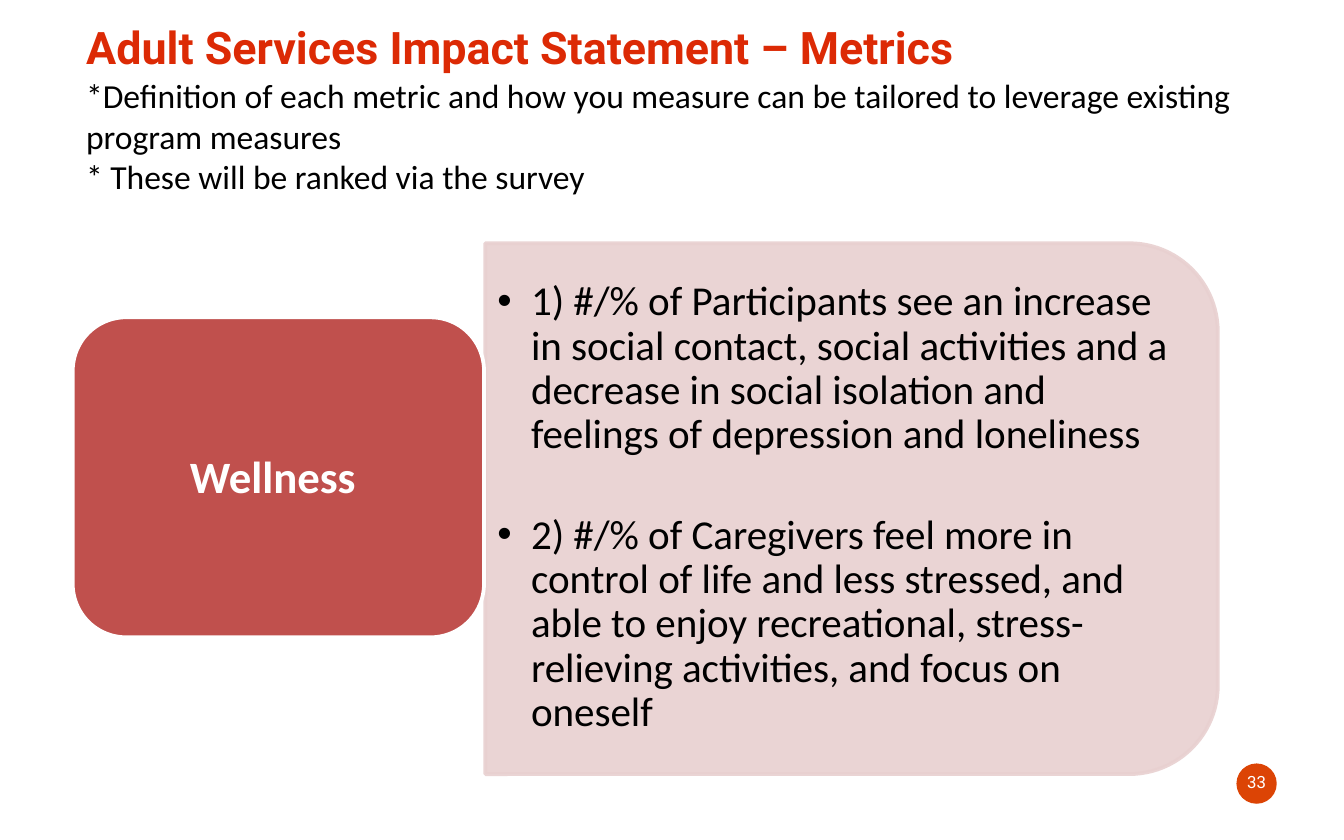
from pptx import Presentation
from pptx.dml.color import RGBColor
from pptx.enum.shapes import MSO_SHAPE as Shape
from pptx.enum.text import MSO_ANCHOR as Anchor, MSO_AUTO_SIZE as AutoSize, PP_ALIGN as Align
from pptx.oxml.ns import qn
from pptx.util import Pt
from lxml.etree import SubElement

RED, CARD, PANEL, BADGE = "DC2A05", "C0504D", "E8D0D0", "DC4405"
BLACK, WHITE = "000000", "FFFFFF"


def color(hex_string):
    return RGBColor.from_string(hex_string)


class SlideBuilder:
    heading_font = "Roboto"
    body_font = "Calibri"

    def __init__(self, slide):
        self.slide = slide

    def set_text(self, shape, lines, size, font, ink, bold=False, align=Align.LEFT,
                 anchor=Anchor.TOP, margins=(7.2, 3.6, 7.2, 3.6), spacing=1.0, gap=0):
        frame = shape.text_frame
        frame.text = "\n".join(lines)
        frame.word_wrap = True
        frame.auto_size = AutoSize.NONE
        frame.vertical_anchor = anchor
        (frame.margin_left, frame.margin_top,
         frame.margin_right, frame.margin_bottom) = map(Pt, margins)
        for index, paragraph in enumerate(frame.paragraphs):
            paragraph.alignment = align
            paragraph.line_spacing = spacing
            paragraph.space_before = Pt(gap if index else 0)
            paragraph.space_after = Pt(0)
            paragraph.font.name = font
            paragraph.font.size = Pt(size)
            paragraph.font.bold = bold
            paragraph.font.color.rgb = color(ink)

    def place(self, shape, box):
        shape.left, shape.top, shape.width, shape.height = map(Pt, box)
        return shape

    def title(self, text, box):
        shape = self.place(self.slide.shapes.title, box)
        self.set_text(shape, [text], 24, self.heading_font, RED, bold=True)

    def notes(self, lines, box):
        shape = self.slide.shapes.add_textbox(*map(Pt, box))
        self.set_text(shape, lines, 18, self.body_font, BLACK)

    def bullets(self, lines, box, indent=18):
        shape = self.place(self.slide.placeholders[1], box)
        self.set_text(shape, lines, 22, self.body_font, BLACK, anchor=Anchor.MIDDLE,
                      margins=(6.5, 3.6, 6.5, 3.6), spacing=0.9, gap=30)
        for paragraph in shape.text_frame.paragraphs:
            properties = paragraph._p.get_or_add_pPr()
            properties.set("marL", str(Pt(indent)))
            properties.set("indent", str(-Pt(indent)))

    def block(self, kind, box, fill, line=None):
        shape = self.slide.shapes.add_shape(kind, *map(Pt, box))
        shape.shadow.inherit = False
        shape.fill.solid()
        shape.fill.fore_color.rgb = color(fill)
        if line:
            shape.line.color.rgb = color(line)
            shape.line.width = Pt(2)
        else:
            shape.line.fill.background()
        return shape

    def panel(self, box):
        # The rounded top edge is turned to face right
        left, top, width, height = box
        shift = (width - height) / 2
        turned = (left + shift, top - shift, height, width)
        shape = self.block(Shape.ROUND_2_SAME_RECTANGLE, turned, PANEL, PANEL)
        shape.rotation = 90
        for paint in shape._element.spPr.iter(qn("a:srgbClr")):
            SubElement(paint, qn("a:alpha")).set("val", "90000")
        # Behind the list placeholder
        shape._element.getparent().insert(2, shape._element)

    def card(self, text, box):
        shape = self.block(Shape.ROUNDED_RECTANGLE, box, CARD, WHITE)
        self.set_text(shape, [text], 24, self.body_font, WHITE, bold=True, align=Align.CENTER,
                      anchor=Anchor.MIDDLE, margins=(0, 2, 6, 0), spacing=0.9)

    def badge(self, text, box):
        shape = self.block(Shape.OVAL, box, BADGE)
        self.set_text(shape, [text], 9, self.heading_font, WHITE, align=Align.CENTER,
                      anchor=Anchor.MIDDLE, margins=(0, 0, 0, 2))


def main():
    presentation = Presentation()
    presentation.slide_width, presentation.slide_height = Pt(720), Pt(450)
    slide = presentation.slides.add_slide(presentation.slide_layouts[1])
    builder = SlideBuilder(slide)

    # Heading
    builder.title("Adult Services Impact Statement – Metrics", (39, 7.2, 600, 36))
    builder.notes([
        "*Definition of each metric and how you measure can be tailored to "
        "leverage existing program measures",
        "* These will be ranked via the survey",
    ], (39, 36.7, 649.5, 94))

    # Metrics
    builder.panel((260, 130.3, 392.4, 284.4))
    builder.bullets([
        "1) #/% of Participants see an increase in social contact, social activities "
        "and a decrease in social isolation and feelings of depression and loneliness",
        "2) #/% of Caregivers feel more in control of life and less stressed, and able "
        "to enjoy recreational, stress-relieving activities, and focus on oneself",
    ], (260, 144, 378.7, 256.3))
    builder.card("Wellness", (39, 170, 220.3, 171.4))

    # Page number
    builder.badge("33", (662.4, 409, 21.6, 21.6))

    presentation.save("out.pptx")


if __name__ == "__main__":
    main()
